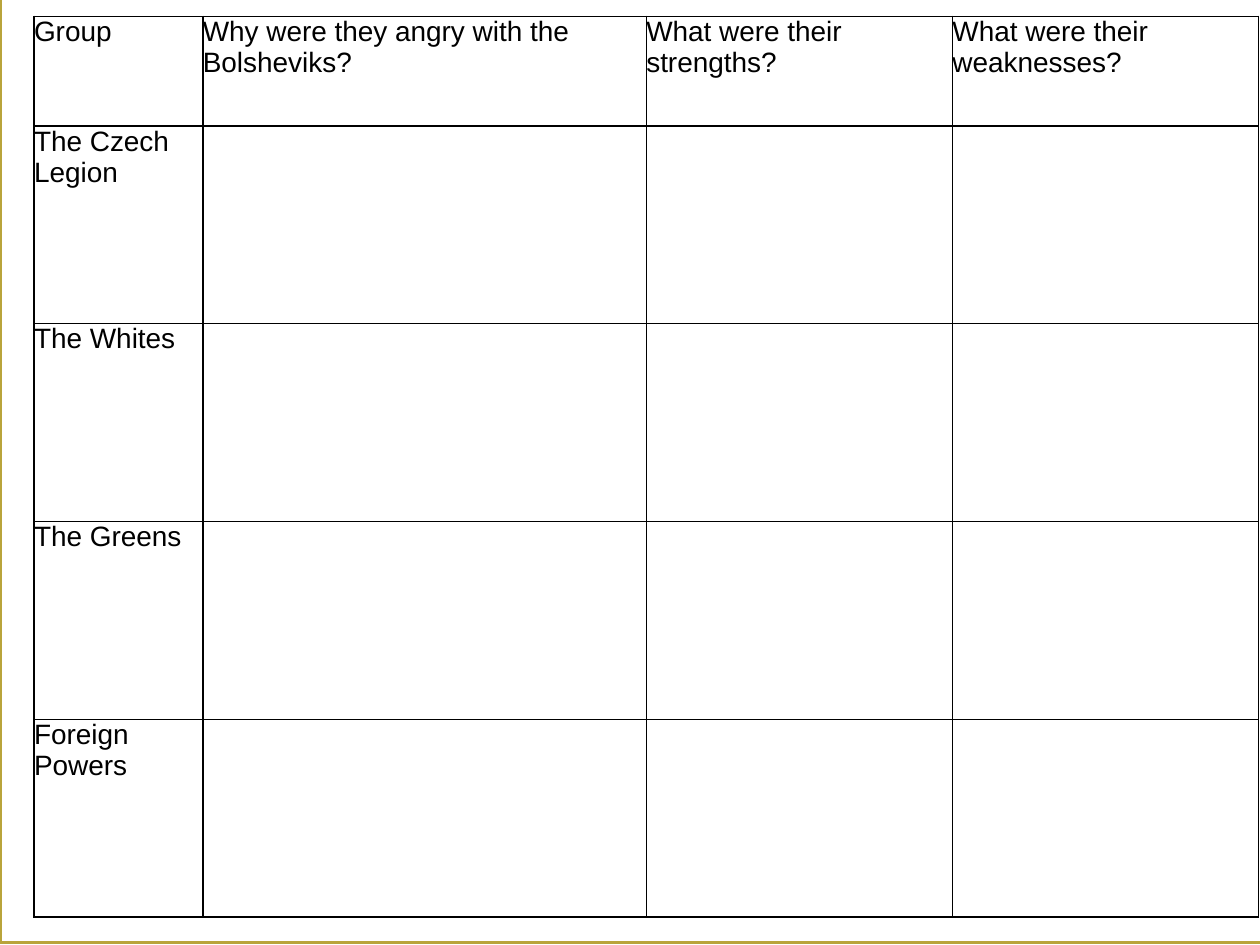
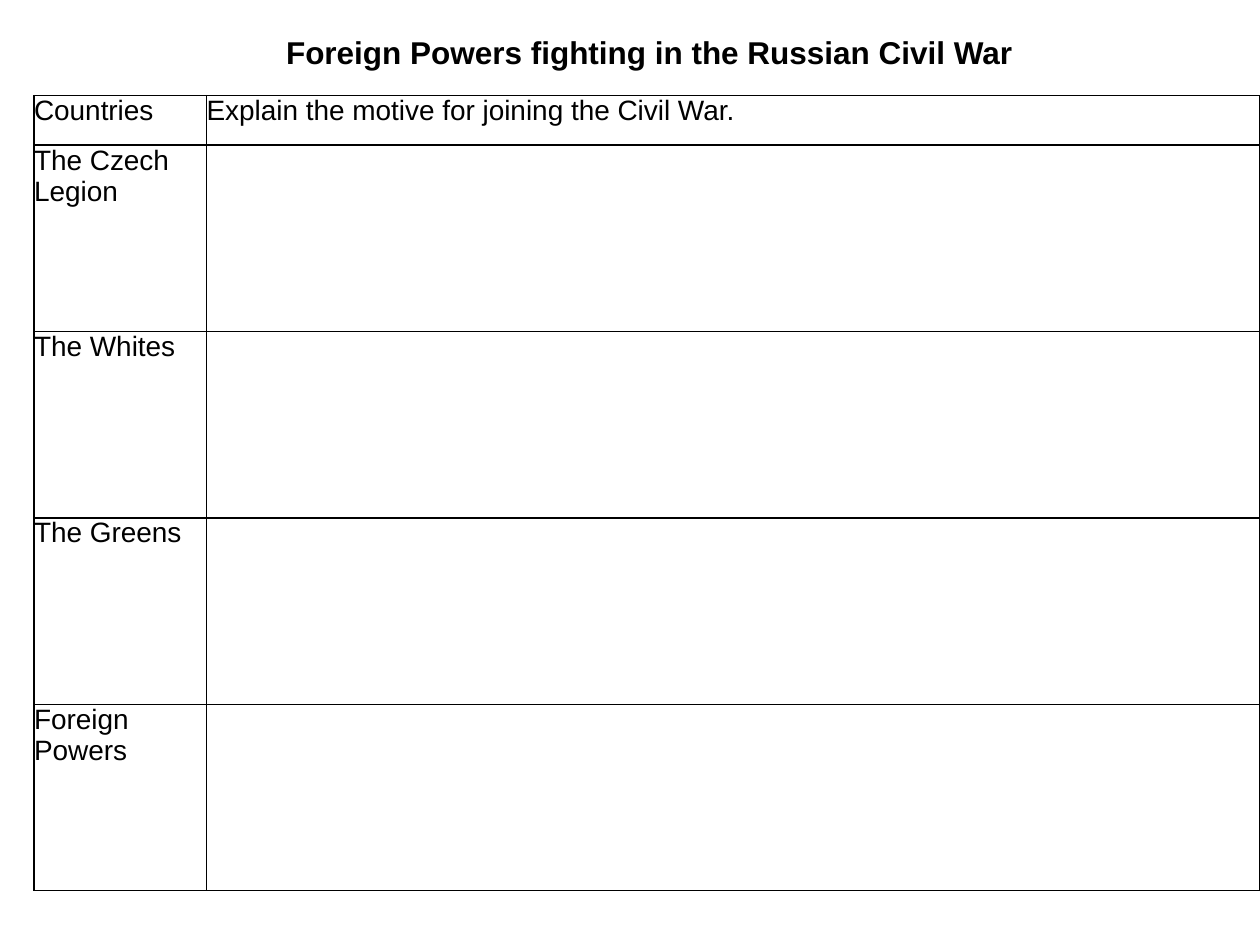
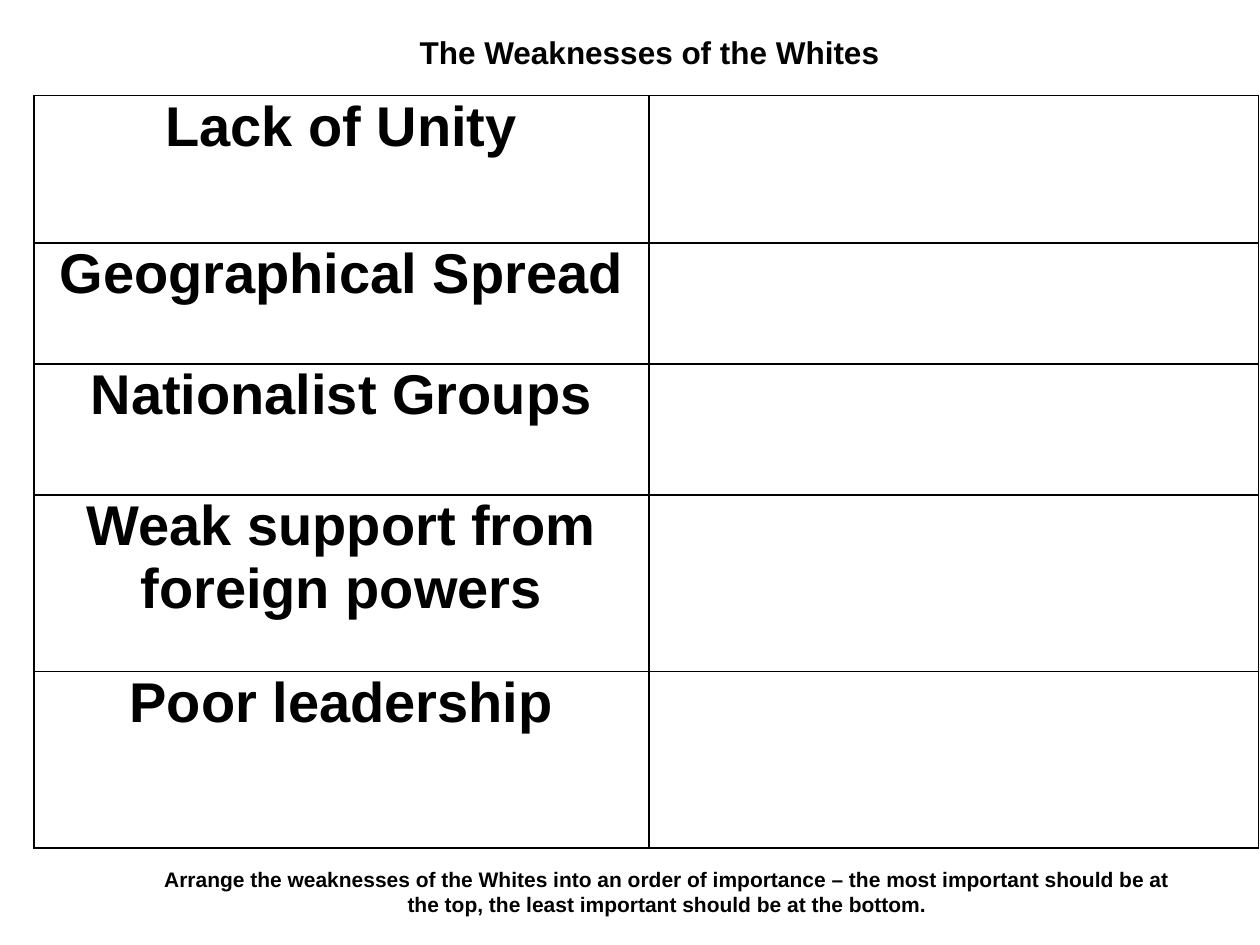
from lxml import etree
from pptx import Presentation
from pptx import util as u
from pptx.dml.color import RGBColor
from pptx.enum import shapes, text
from pptx.oxml import ns

COLOURS = {"paper": "FFFFFF", "ink": "000000", "gold": "B9A43B"}
FONT = "Arial"
WIDTH, HEIGHT = 10, 7.5
TABLE_LEFT = 0.27
LEFT, CENTRE = text.PP_ALIGN.LEFT, text.PP_ALIGN.CENTER
GROUPS = ["The Czech Legion", "The Whites", "The Greens", "Foreign Powers"]
TITLE_AREA = (0.51, 0.21, 9.29, 0.4)
LABEL = {"size": u.Pt(16), "bold": False}
HEADLINE = {"size": u.Pt(32), "bold": True}
TITLE = {"size": u.Pt(18), "bold": True}
NOTE = {"size": u.Pt(12), "bold": True}

WORKSHEETS = [
    {
        "backdrop_top": -0.02, "outline": "gold", "table_top": 0.13,
        "columns": [1.34, 3.52, 2.43, 2.43], "rows": [0.87] + [1.57] * 4,
        "header": ["Group", "Why were they angry with the Bolsheviks?",
                   "What were their strengths?", "What were their weaknesses?"],
        "labels": GROUPS, "style": LABEL, "align": LEFT, "captions": [],
    },
    {
        "backdrop_top": 0, "outline": "paper", "table_top": 0.76,
        "columns": [1.37, 8.36], "rows": [0.39] + [1.48] * 4,
        "header": ["Countries", "Explain the motive for joining the Civil War."],
        "labels": GROUPS, "style": LABEL, "align": LEFT,
        "captions": [("Foreign Powers fighting in the Russian Civil War", TITLE_AREA, TITLE)],
    },
    {
        "backdrop_top": 0, "outline": "paper", "table_top": 0.76,
        "columns": [4.88, 4.84], "rows": [1.17, 0.96, 1.04, 1.4, 1.4],
        "header": ["Lack of Unity", ""],
        "labels": ["Geographical Spread", "Nationalist Groups",
                   "Weak support from foreign powers", "Poor leadership"],
        "style": HEADLINE, "align": CENTRE,
        "captions": [
            ("The Weaknesses of the Whites", TITLE_AREA, TITLE),
            ("Arrange the weaknesses of the Whites into an order of importance – "
             "the most important should be at the top, the least important should "
             "be at the bottom.", (1.06, 6.82, 8.47, 0.51), NOTE),
        ],
    },
]


def write_text(frame, words, style, align):
    frame.word_wrap = True
    para = frame.paragraphs[0]
    para.alignment = align
    span = para.add_run()
    span.text = words
    span.font.name = FONT
    span.font.color.rgb = RGBColor.from_string(COLOURS["ink"])
    for name, value in style.items():
        setattr(span.font, name, value)


def format_cell(cell):
    for side in ("left", "right", "top", "bottom"):
        setattr(cell, f"margin_{side}", 0)
    properties = cell._tc.get_or_add_tcPr()
    for edge in ("lnL", "lnR", "lnT", "lnB"):
        line = etree.SubElement(properties, ns.qn(f"a:{edge}"), w=str(u.Pt(1)))
        fill = etree.SubElement(line, ns.qn("a:solidFill"))
        etree.SubElement(fill, ns.qn("a:srgbClr"), val=COLOURS["ink"])
    cell.fill.background()


deck = Presentation()
deck.slide_width, deck.slide_height = u.Inches(WIDTH), u.Inches(HEIGHT)

for sheet in WORKSHEETS:
    page = deck.slides.add_slide(deck.slide_layouts[6])

    backdrop = page.shapes.add_shape(
        shapes.MSO_SHAPE.RECTANGLE, 0, u.Inches(sheet["backdrop_top"]),
        u.Inches(WIDTH * 1.02), u.Inches(HEIGHT))
    backdrop.shadow.inherit = False
    backdrop.fill.solid()
    backdrop.fill.fore_color.rgb = RGBColor.from_string(COLOURS["paper"])
    backdrop.line.color.rgb = RGBColor.from_string(COLOURS[sheet["outline"]])
    backdrop.line.width = u.Pt(2)

    columns, rows = sheet["columns"], sheet["rows"]
    table = page.shapes.add_table(
        len(rows), len(columns), u.Inches(TABLE_LEFT), u.Inches(sheet["table_top"]),
        u.Inches(sum(columns)), u.Inches(sum(rows))).table
    table.first_row = table.horz_banding = False
    for column, width in zip(table.columns, columns):
        column.width = u.Inches(width)
    for row, height in zip(table.rows, rows):
        row.height = u.Inches(height)
    for cell in table.iter_cells():
        format_cell(cell)

    entries = [sheet["header"]] + [[label] for label in sheet["labels"]]
    for row_index, entry in enumerate(entries):
        for column_index, words in enumerate(entry):
            if words:
                write_text(table.cell(row_index, column_index).text_frame,
                           words, sheet["style"], sheet["align"])

    for words, area, style in sheet["captions"]:
        box = page.shapes.add_textbox(*[u.Inches(length) for length in area])
        box.text_frame.vertical_anchor = text.MSO_ANCHOR.MIDDLE
        write_text(box.text_frame, words, style, CENTRE)

deck.save("out.pptx")
